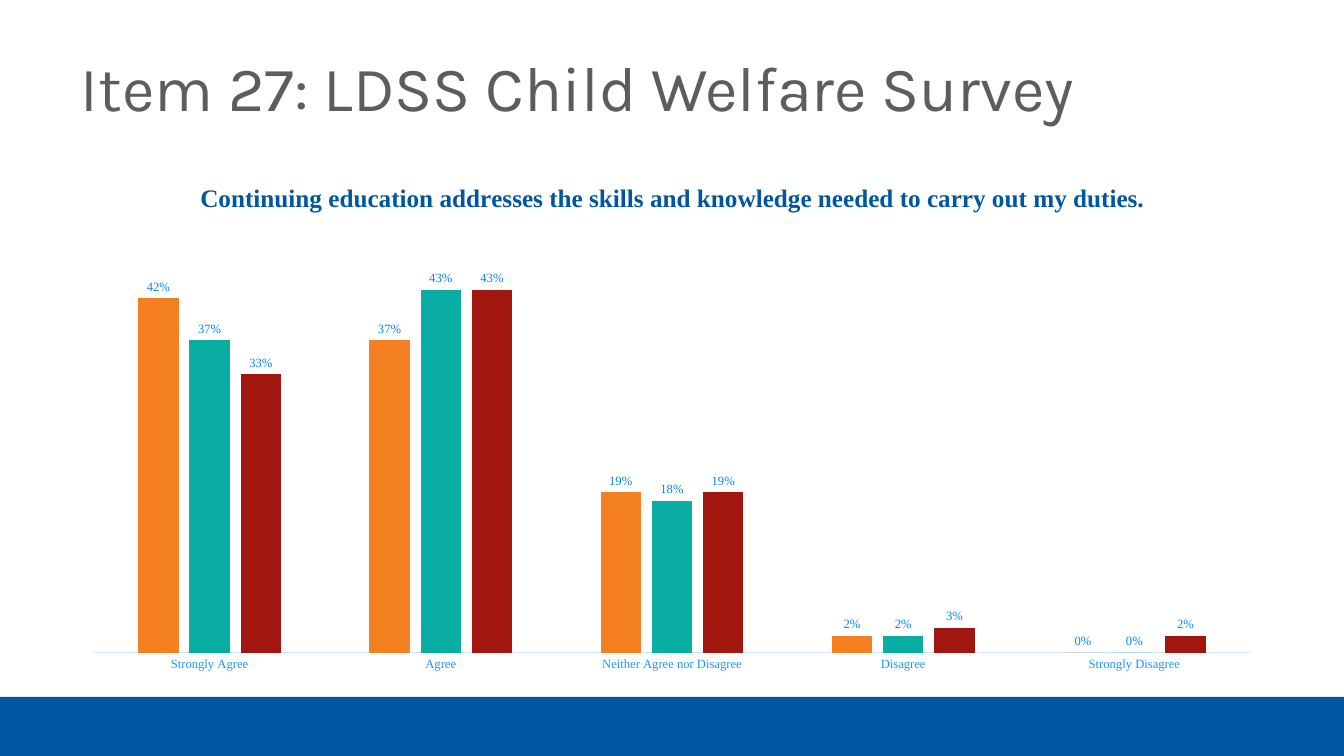
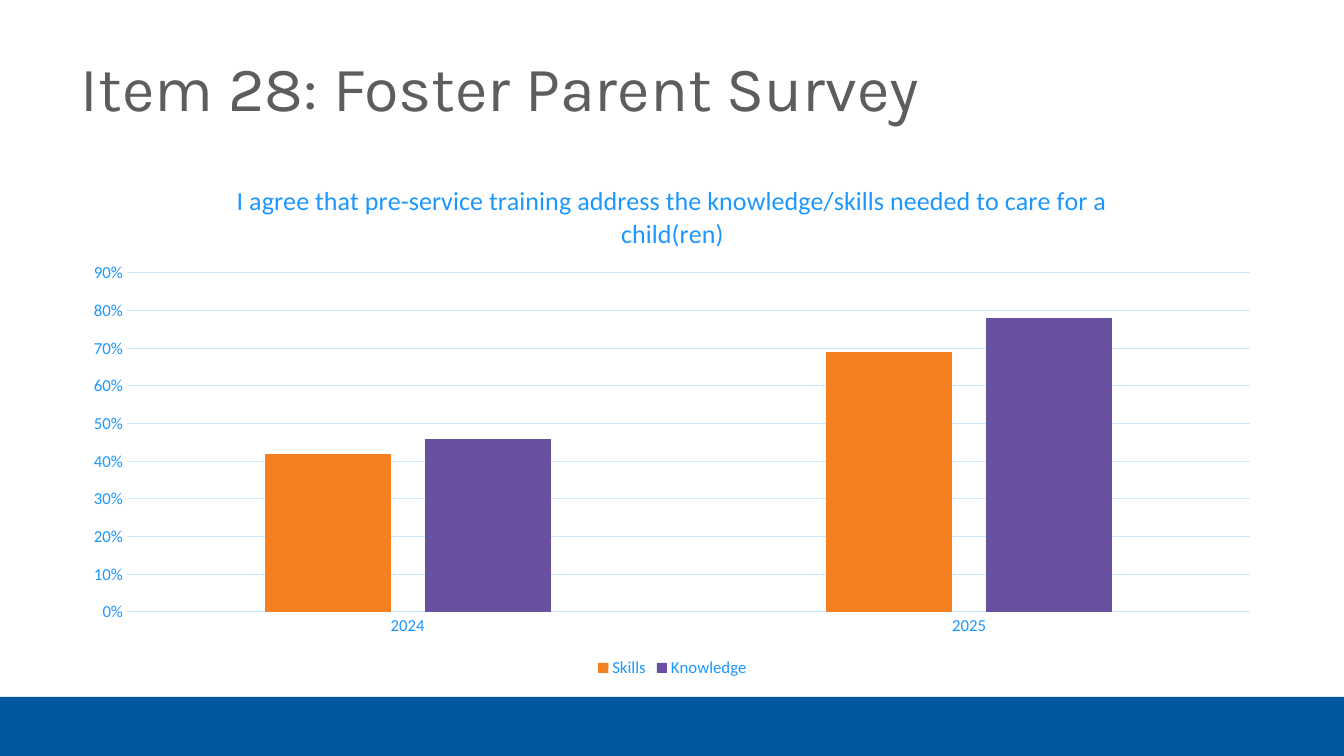
from lxml import etree
from pptx import Presentation
from pptx import util as u
from pptx.chart.data import CategoryChartData
from pptx.dml.color import RGBColor
from pptx.enum import chart as ch, shapes, text
from pptx.oxml.ns import qn

# Content; "plot" is the inner plot area in px: left, top, right, bottom
SLIDES = [
    {
        "title": "Item 27: LDSS Child Welfare Survey",
        "question": "Continuing education addresses the skills and knowledge "
                    "needed to carry out my duties.",
        "question_style": (18, "blue", True),
        "font": "Times New Roman",
        "axis_size": 9,
        "categories": ["Strongly Agree", "Agree", "Neither Agree nor Disagree",
                       "Disagree", "Strongly Disagree"],
        "series": [
            ("Series 1", "orange", (0.42, 0.37, 0.19, 0.02, 0)),
            ("Series 2", "teal", (0.37, 0.43, 0.18, 0.02, 0)),
            ("Series 3", "red", (0.33, 0.43, 0.19, 0.03, 0.02)),
        ],
        "top_value": 0.45,
        "plot": (94, 273, 1250, 653),
        "bar_labels": True,
    },
    {
        "title": "Item 28: Foster Parent Survey",
        "question": "I agree that pre-service training address the "
                    "knowledge/skills needed to care for a child(ren)",
        "question_style": (18.6, "sky", False),
        "font": "Calibri",
        "axis_size": 12,
        "categories": ["2024", "2025"],
        "series": [
            ("Skills", "orange", (0.42, 0.69)),
            ("Knowledge", "purple", (0.46, 0.78)),
        ],
        "top_value": 0.9,
        "plot": (127, 273, 1250, 612),
        "bar_labels": False,
    },
]

COLORS = {
    "blue": "0057A1", "grey": "5C5D5F", "sky": "1C97FF", "label": "0086F8",
    "rule": "CBE7FF", "orange": "F58021", "teal": "09ADA3", "red": "A11710",
    "purple": "6950A1",
}
PX = 914400 / 100.8
WIDTH, HEIGHT = 1344, 756
BAND_TOP = 697
TITLE_BOX = (71, 37, 1203, 109)
CHART_BOX = (71, 162, 1203, 520)


def emu(*lengths):
    return [u.Emu(round(length * PX)) for length in lengths]


def color(name):
    return RGBColor.from_string(COLORS[name])


def style(font, face, size, color_name, bold=False):
    font.name, font.size, font.bold = face, u.Pt(size), bold
    font.color.rgb = color(color_name)


def rule(line):
    line.color.rgb = color("rule")
    line.width = u.Pt(0.75)


def add_frame(slide, title):
    """Footer band and slide title."""
    band = slide.shapes.add_shape(shapes.MSO_SHAPE.RECTANGLE,
                                  *emu(0, BAND_TOP, WIDTH, HEIGHT - BAND_TOP))
    band.shadow.inherit = False
    band.fill.solid()
    band.fill.fore_color.rgb = color("blue")
    band.line.fill.background()

    frame = slide.shapes.add_textbox(*emu(*TITLE_BOX)).text_frame
    frame.word_wrap = True
    frame.vertical_anchor = text.MSO_ANCHOR.MIDDLE
    heading = frame.paragraphs[0]
    heading.text = title
    heading.line_spacing = 0.9
    style(heading.font, "Karla", 45, "grey")


def place_plot(chart, box):
    """Fix the inner plot area, as fractions of the chart."""
    left, top, width, height = CHART_BOX
    x1, y1, x2, y2 = box
    plot_area = chart.element.find(".//" + qn("c:plotArea"))
    for old in plot_area.findall(qn("c:layout")):
        plot_area.remove(old)
    layout = etree.Element(qn("c:layout"))
    manual = etree.SubElement(layout, qn("c:manualLayout"))
    settings = [("layoutTarget", "inner"), ("xMode", "edge"), ("yMode", "edge"),
                ("x", (x1 - left) / width), ("y", (y1 - top) / height),
                ("w", (x2 - x1) / width), ("h", (y2 - y1) / height)]
    for tag, value in settings:
        etree.SubElement(manual, qn("c:" + tag)).set("val", str(value))
    plot_area.insert(0, layout)


def add_survey_chart(slide, survey):
    face, size = survey["font"], survey["axis_size"]
    data = CategoryChartData(number_format="0%")
    data.categories = survey["categories"]
    for name, _, values in survey["series"]:
        data.add_series(name, values)
    chart = slide.shapes.add_chart(ch.XL_CHART_TYPE.COLUMN_CLUSTERED,
                                   *emu(*CHART_BOX), data).chart
    style(chart.font, face, 10, "blue")

    # Survey question
    chart.has_title = True
    question = chart.chart_title.text_frame.paragraphs[0]
    question.text = survey["question"]
    question_size, question_color, bold = survey["question_style"]
    style(question.font, face, question_size, question_color, bold)
    chart.chart_title.include_in_layout = False

    # Bars
    plot = chart.plots[0]
    plot.gap_width, plot.overlap = 219, -27
    plot.vary_by_categories = False
    for bars, (_, fill, _) in zip(plot.series, survey["series"]):
        bars.format.fill.solid()
        bars.format.fill.fore_color.rgb = color(fill)
        bars.invert_if_negative = False
        if survey["bar_labels"]:
            labels = bars.data_labels
            labels.show_value = True
            labels.position = ch.XL_LABEL_POSITION.OUTSIDE_END
            labels.number_format = "0%"
            labels.number_format_is_linked = False
            style(labels.font, face, 9, "label")

    # Axes: bar labels stand in for the value axis and the legend
    answers, share = chart.category_axis, chart.value_axis
    for axis in (answers, share):
        axis.major_tick_mark = axis.minor_tick_mark = ch.XL_TICK_MARK.NONE
        style(axis.tick_labels.font, face, size, "sky")
    rule(answers.format.line)
    share.minimum_scale, share.maximum_scale = 0, survey["top_value"]
    share.tick_labels.number_format = "0%"
    share.tick_labels.number_format_is_linked = False
    share.format.line.fill.background()
    share.visible = share.has_major_gridlines = not survey["bar_labels"]
    chart.has_legend = not survey["bar_labels"]
    if chart.has_legend:
        share.major_unit = 0.1
        rule(share.major_gridlines.format.line)
        chart.legend.position = ch.XL_LEGEND_POSITION.BOTTOM
        chart.legend.include_in_layout = False
        style(chart.legend.font, face, size, "sky")

    place_plot(chart, survey["plot"])


def main():
    deck = Presentation()
    deck.slide_width, deck.slide_height = emu(WIDTH, HEIGHT)
    for survey in SLIDES:
        slide = deck.slides.add_slide(deck.slide_layouts[6])
        add_frame(slide, survey["title"])
        add_survey_chart(slide, survey)
    deck.save("out.pptx")


if __name__ == "__main__":
    main()
